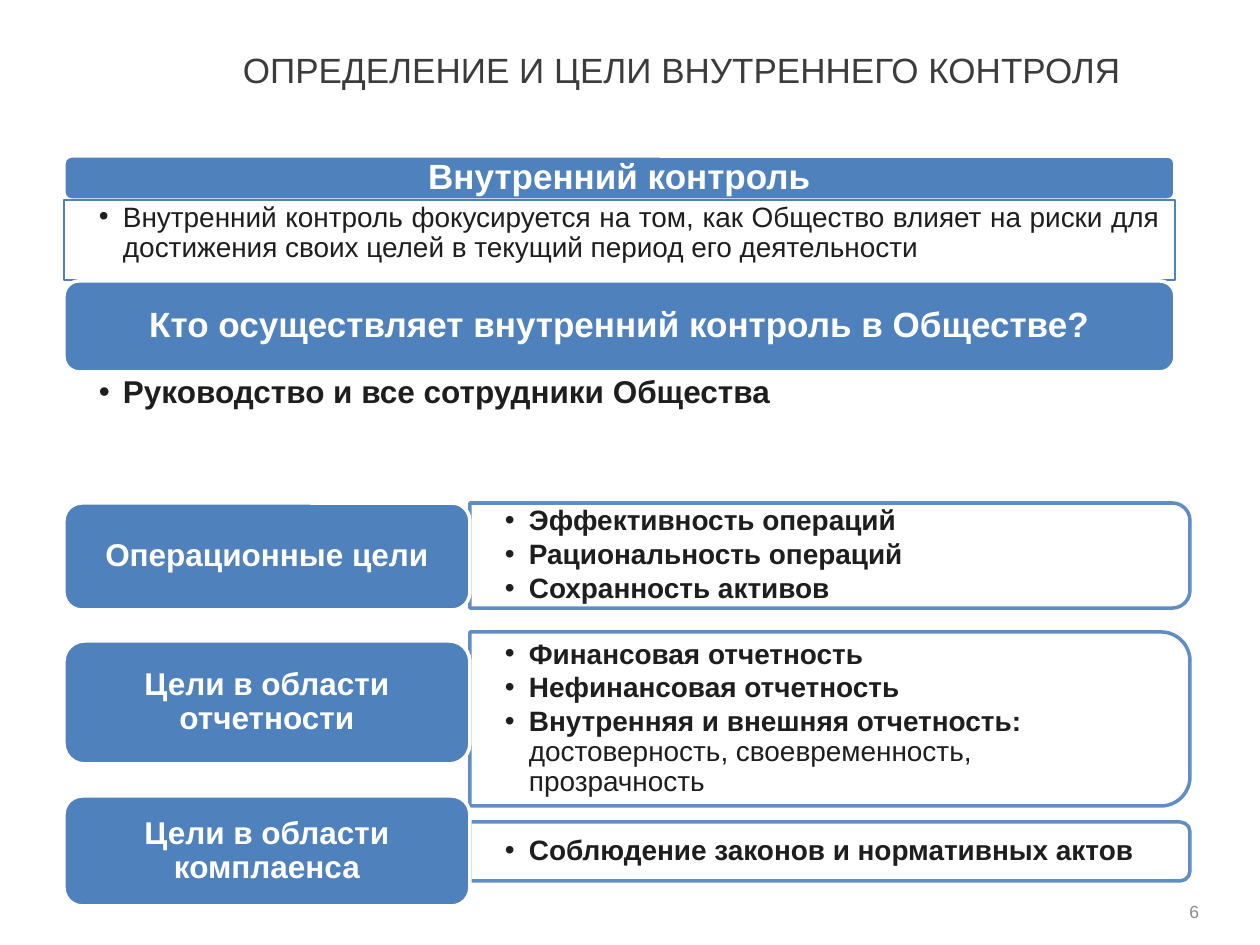
from dataclasses import dataclass

from lxml import etree
from pptx import Presentation
from pptx.dml.color import RGBColor
from pptx.enum.shapes import MSO_SHAPE
from pptx.enum.text import MSO_ANCHOR, PP_ALIGN
from pptx.oxml.ns import qn
from pptx.util import Emu, Pt

EMU_PER_PX = 914400 // 126
ROUNDED = MSO_SHAPE.ROUNDED_RECTANGLE
TWO_ROUNDED = MSO_SHAPE.ROUND_2_SAME_RECTANGLE
RECTANGLE = MSO_SHAPE.RECTANGLE
TOP, MIDDLE = MSO_ANCHOR.TOP, MSO_ANCHOR.MIDDLE
LEFT, CENTER, RIGHT, JUSTIFY = PP_ALIGN.LEFT, PP_ALIGN.CENTER, PP_ALIGN.RIGHT, PP_ALIGN.JUSTIFY


@dataclass(frozen=True)
class Theme:
    font: str = "Arial"
    accent: str = "4F81BD"
    white: str = "FFFFFF"
    title: str = "3C3C3C"
    body: str = "1E1E1E"
    muted: str = "8A8A8A"
    heading_size: int = 20
    label_size: int = 18
    body_size: int = 16
    number_size: int = 10
    line_spacing: float = 0.9
    panel_opacity: int = 90


THEME = Theme()


def px(value):
    return Emu(round(value * EMU_PER_PX))


def color(name):
    return RGBColor.from_string(name)


def set_frame(shape, anchor=TOP, insets=(0, 0, 0, 0)):
    frame = shape.text_frame
    frame.word_wrap = True
    frame.vertical_anchor = anchor
    (frame.margin_left, frame.margin_top,
     frame.margin_right, frame.margin_bottom) = map(px, insets)
    return frame


def style_paragraph(paragraph, size, text_color, bold=False, align=LEFT):
    paragraph.alignment = align
    paragraph.line_spacing = THEME.line_spacing
    for run in paragraph.runs:
        run.font.name = THEME.font
        run.font.size = Pt(size)
        run.font.bold = bold
        run.font.color.rgb = color(text_color)


def add_bullet(paragraph):
    properties = paragraph._p.get_or_add_pPr()
    properties.set("marL", str(px(24)))
    properties.set("indent", str(px(-24)))
    bullet_font = etree.SubElement(properties, qn("a:buFont"))
    bullet_font.set("typeface", THEME.font)
    etree.SubElement(properties, qn("a:buChar")).set("char", "•")


def set_opacity(color_format_parent, percent):
    rgb = color_format_parent.find(".//" + qn("a:srgbClr"))
    etree.SubElement(rgb, qn("a:alpha")).set("val", str(percent * 1000))


def add_outlined_shape(slide, kind, box, fill, line, width):
    shape = slide.shapes.add_shape(kind, *map(px, box))
    shape.shadow.inherit = False
    if fill:
        shape.fill.solid()
        shape.fill.fore_color.rgb = color(fill)
    else:
        shape.fill.background()
    shape.line.color.rgb = color(line)
    shape.line.width = Pt(width)
    return shape


def add_plain_text(slide, box, text, size, text_color, align=LEFT, anchor=TOP):
    text_box = slide.shapes.add_textbox(*map(px, box))
    frame = set_frame(text_box, anchor)
    frame.text = text
    style_paragraph(frame.paragraphs[0], size, text_color, align=align)


def add_label(slide, box, text, size):
    """Blue rounded box with centred bold white text."""
    shape = add_outlined_shape(slide, ROUNDED, box, THEME.accent, THEME.white, 2)
    frame = set_frame(shape, MIDDLE, (9, 0, 9, 0))
    frame.text = text
    style_paragraph(frame.paragraphs[0], size, THEME.white, True, CENTER)


def fill_bullets(frame, items, size, bold=True, align=LEFT):
    for index, item in enumerate(items):
        paragraph = frame.paragraphs[0] if index == 0 else frame.add_paragraph()
        paragraph.text = item
        add_bullet(paragraph)
        paragraph.space_after = Pt(2)
        style_paragraph(paragraph, size, THEME.body, bold, align)


def add_definition_section(slide, box):
    left, top, width, _ = box
    add_label(slide, (left, top, width, 44), "Внутренний контроль", THEME.heading_size)

    definition = add_outlined_shape(slide, RECTANGLE, (left, top + 44, width, 80),
                                    None, THEME.accent, 0.75)
    fill_bullets(set_frame(definition, TOP, (35, 3, 15, 3)),
                 ["Внутренний контроль фокусируется на том, как Общество влияет на риски "
                  "для достижения своих целей в текущий период его деятельности"],
                 THEME.body_size, False, JUSTIFY)

    add_label(slide, (left, top + 125, width, 91),
              "Кто осуществляет внутренний контроль в Обществе?", THEME.heading_size)
    answer = slide.shapes.add_textbox(*map(px, (left, top + 216, width, 79)))
    fill_bullets(set_frame(answer, TOP, (35, 4, 18, 4)),
                 ["Руководство и все сотрудники Общества"], THEME.label_size)


def add_goal_panel(slide, box, items, plain_ending):
    """White panel rounded on its right side, with a bulleted text over it."""
    left, top, width, height = box
    upright = (left + (width - height) / 2, top + (height - width) / 2, height, width)
    panel = add_outlined_shape(slide, TWO_ROUNDED, upright, THEME.white, THEME.accent, 2)
    panel.rotation = 90
    set_opacity(panel._element.spPr.find(qn("a:solidFill")), THEME.panel_opacity)
    set_opacity(panel._element.spPr.find(qn("a:ln")), THEME.panel_opacity)

    text_box = slide.shapes.add_textbox(*map(px, box))
    frame = set_frame(text_box, MIDDLE, (35, 0, 43, 0))
    fill_bullets(frame, items, THEME.body_size)
    if plain_ending:
        paragraph = frame.paragraphs[-1]
        paragraph.add_run().text = plain_ending
        style_paragraph(paragraph, THEME.body_size, THEME.body)
        paragraph.runs[0].font.bold = True


def add_goals_section(slide, box):
    left, top, width, _ = box
    label_width = 406
    # label, its offset and height, panel offset and height, bullets, plain ending
    goals = [
        ("Операционные цели", 0, 107, 0, 105,
         ["Эффективность операций", "Рациональность операций", "Сохранность активов"], ""),
        ("Цели в области отчетности", 138, 123, 129, 174,
         ["Финансовая отчетность", "Нефинансовая отчетность",
          "Внутренняя и внешняя отчетность: "],
         "достоверность, своевременность, прозрачность"),
        ("Цели в области комплаенса", 293, 110, 319, 59,
         ["Соблюдение законов и нормативных актов"], ""),
    ]
    for label, label_top, label_height, panel_top, panel_height, items, ending in goals:
        add_goal_panel(slide, (left + label_width, top + panel_top,
                               width - label_width, panel_height), items, ending)
        add_label(slide, (left, top + label_top, label_width, label_height),
                  label, THEME.label_size)


def main():
    presentation = Presentation()
    presentation.slide_width, presentation.slide_height = px(1260), px(945)
    slide = presentation.slides.add_slide(presentation.slide_layouts[6])

    add_plain_text(slide, (1145, 901, 54, 23), "6", THEME.number_size, THEME.muted,
                   RIGHT, MIDDLE)
    add_plain_text(slide, (243, 53, 883, 59), "ОПРЕДЕЛЕНИЕ И ЦЕЛИ ВНУТРЕННЕГО КОНТРОЛЯ",
                   THEME.heading_size, THEME.title)
    add_definition_section(slide, (64, 156, 1111, 295))
    add_goals_section(slide, (64, 503, 1126, 403))
    presentation.save("out.pptx")


if __name__ == "__main__":
    main()
